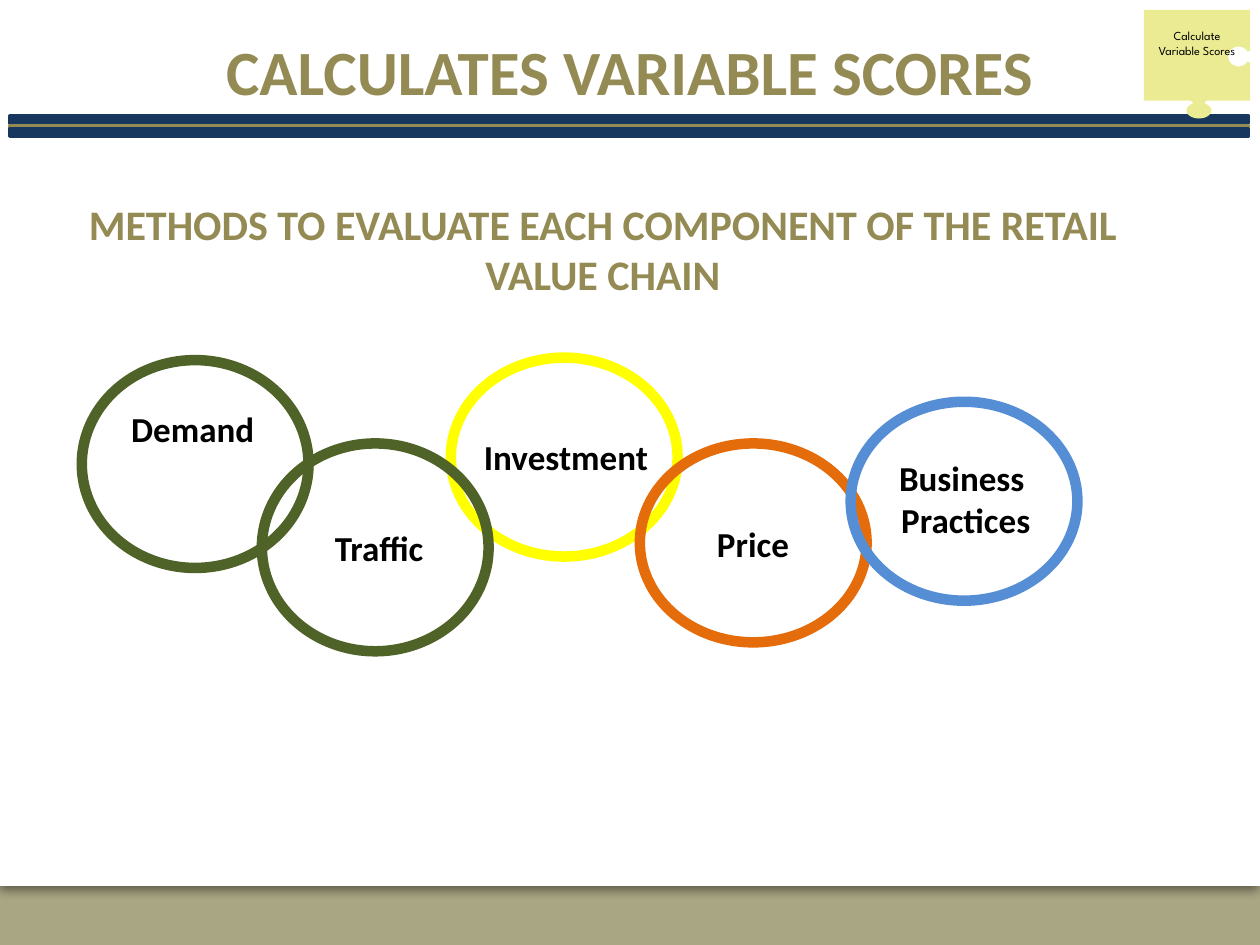
import math
from dataclasses import dataclass

import pptx
import pptx.dml.color
import pptx.enum.shapes
import pptx.enum.text
import pptx.oxml
import pptx.oxml.ns
import pptx.util

Cm = pptx.util.Cm
Pt = pptx.util.Pt
RGB = pptx.dml.color.RGBColor.from_string
Shapes = pptx.enum.shapes.MSO_SHAPE
Anchor = pptx.enum.text.MSO_ANCHOR
AutoSize = pptx.enum.text.MSO_AUTO_SIZE


@dataclass(frozen=True)
class Theme:
    footer: str = "A9A684"
    page: str = "FFFFFF"
    navy: str = "17375E"
    gold: str = "948A54"
    green: str = "4F6228"
    yellow: str = "FFFF00"
    orange: str = "E46C0A"
    blue: str = "558ED5"
    puzzle: str = "EBEB93"
    ink: str = "000000"
    font: str = "Calibri"
    puzzle_font: str = "League Spartan"
    title_size: int = 36
    subtitle_size: int = 24
    label_size: int = 20
    puzzle_size: int = 7


theme = Theme()


def add_outline(preset, box, fill, line, width):
    shape = slide.shapes.add_shape(preset, *map(Cm, box))
    shape.shadow.inherit = False
    if fill:
        shape.fill.solid()
        shape.fill.fore_color.rgb = RGB(fill)
    else:
        shape.fill.background()
    if line:
        shape.line.color.rgb = RGB(line)
        shape.line.width = Pt(width)
    else:
        shape.line.fill.background()
    return shape


def write_text(frame, lines, size, color, font=theme.font, bold=True):
    frame.word_wrap = True
    frame.text = "\n".join(lines)
    for paragraph in frame.paragraphs:
        paragraph.alignment = pptx.enum.text.PP_ALIGN.CENTER
        paragraph.font.name = font
        paragraph.font.size = Pt(size)
        paragraph.font.bold = bold
        paragraph.font.color.rgb = RGB(color)


deck = pptx.Presentation()
deck.slide_width, deck.slide_height = Cm(25.4), Cm(19.05)
slide = deck.slides.add_slide(deck.slide_layouts[6])
slide.background.fill.solid()
slide.background.fill.fore_color.rgb = RGB(theme.footer)

page = add_outline(Shapes.RECTANGLE, (0, 0, 25.4, 17.86), theme.page, None, 0)
effects = page._element.spPr.find(pptx.oxml.ns.qn("a:effectLst"))
effects.append(pptx.oxml.parse_xml(
    f'<a:outerShdw {pptx.oxml.ns.nsdecls("a")} blurRad="{Pt(5)}" dist="{Pt(2)}" '
    f'dir="5400000" rotWithShape="0"><a:srgbClr val="{theme.ink}">'
    '<a:alpha val="43000"/></a:srgbClr></a:outerShdw>'))

for top, height, color in [
    (2.34, 0.15, theme.navy),
    (2.54, 0.1, theme.gold),
    (2.59, 0.15, theme.navy),
]:
    add_outline(Shapes.RECTANGLE, (0.2, top, 24.97, height), color, color, 2)

for heading, box, size in [
    ("CALCULATES VARIABLE SCORES", (1.9, 0.43, 21.59, 1.96), theme.title_size),
    ("METHODS TO EVALUATE EACH COMPONENT OF THE RETAIL VALUE CHAIN",
     (0.51, 3.76, 23.29, 2.51), theme.subtitle_size),
]:
    frame = slide.shapes.add_textbox(*map(Cm, box)).text_frame
    write_text(frame, [heading], size, theme.gold)
    frame.vertical_anchor = Anchor.MIDDLE

tall, short = 4.19, 4.01
chain = [
    (["Demand"], (1.65, 8.1, 4.47, 1.12), (1.65, 7.26), tall, theme.green),
    (["Investment"], (9.25, 8.66, 4.32, 1.12), (9.09, 7.21), short, theme.yellow),
    (["Price"], (13.77, 10.41, 2.82, 1.12), (12.9, 8.94), short, theme.orange),
    (["Business ", "Practices"], (17.68, 9.07, 3.58, 1.96), (17.15, 8.1), short, theme.blue),
    (["Traffic"], (5.41, 10.49, 4.47, 1.12), (5.28, 8.94), tall, theme.green),
]
for lines, label_box, corner, height, color in chain:
    add_outline(Shapes.OVAL, (*corner, 4.57, height), None, color, 6)
    label = slide.shapes.add_textbox(*map(Cm, label_box)).text_frame
    write_text(label, lines, theme.label_size, theme.ink)
    label.word_wrap = len(lines) == 1
    label.auto_size = AutoSize.SHAPE_TO_FIT_TEXT

tab_arc = [
    (24.17 + 0.25 * math.cos(math.radians(a)), 2.23 - 0.16 * math.sin(math.radians(a)))
    for a in range(120, 421, 10)
]
notch_arc = [
    (24.97 + 0.21 * math.cos(math.radians(a)), 1.14 + 0.2 * math.sin(math.radians(a)))
    for a in range(40, 321, 10)
]
outline = [
    (25.2, 0.2), (23.06, 0.2), (23.06, 2.03), (24, 2.03), (24.05, 2.07),
    *tab_arc, (24.28, 2.07), (24.33, 2.03), (25.2, 2.03), (25.2, 1.27), (25.15, 1.24),
    *notch_arc, (25.15, 1.04), (25.2, 1.02),
]
points = [(Cm(x), Cm(y)) for x, y in outline]
builder = slide.shapes.build_freeform(*points[0])
builder.add_line_segments(points[1:], close=True)
puzzle = builder.convert_to_shape()
puzzle.shadow.inherit = False
puzzle.fill.solid()
puzzle.fill.fore_color.rgb = RGB(theme.puzzle)
puzzle.line.fill.background()
write_text(puzzle.text_frame, ["Calculate Variable Scores"], theme.puzzle_size,
           theme.ink, theme.puzzle_font, False)
puzzle.text_frame.vertical_anchor = Anchor.MIDDLE
puzzle.text_frame.margin_bottom = Cm(0.99)

deck.save("out.pptx")
